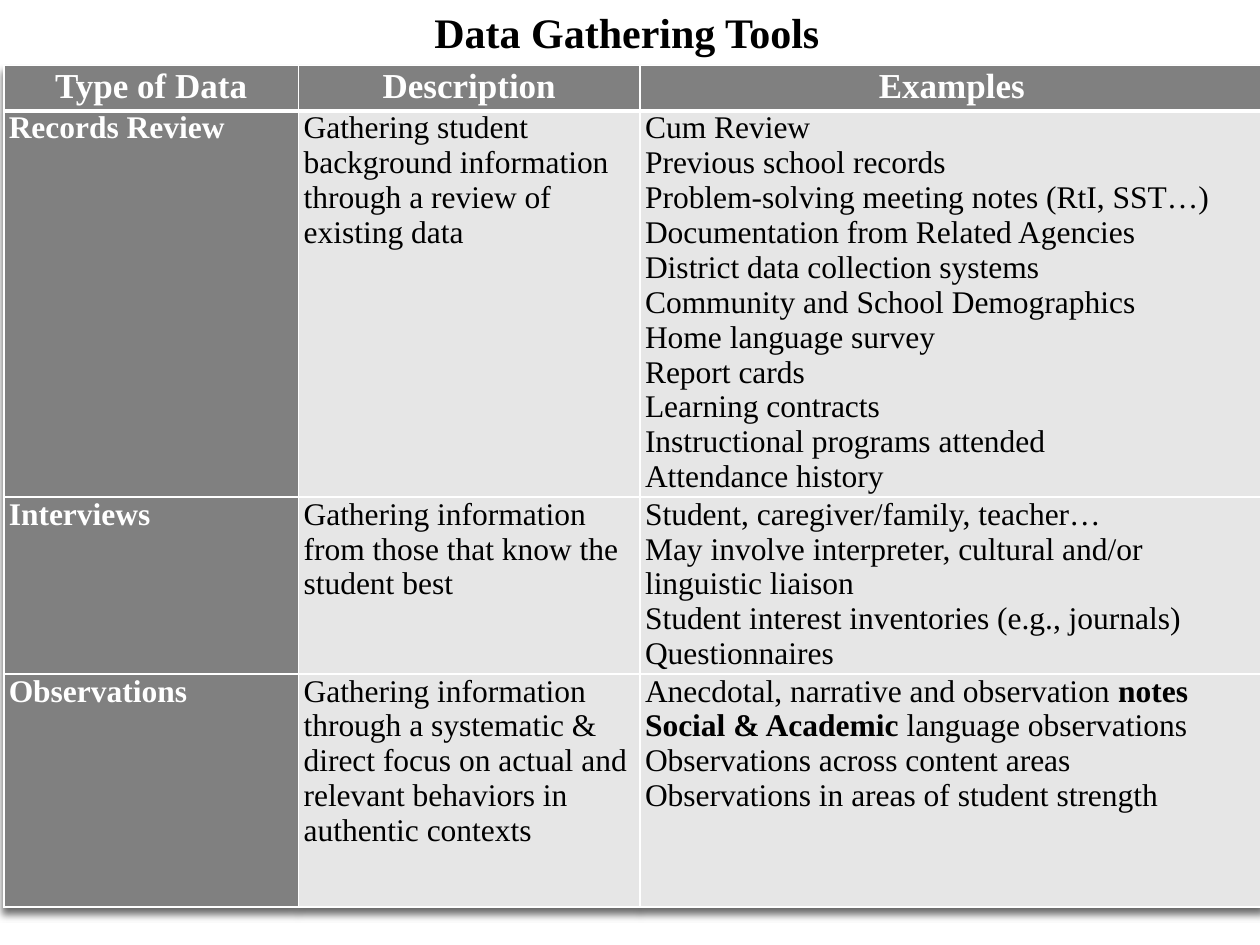
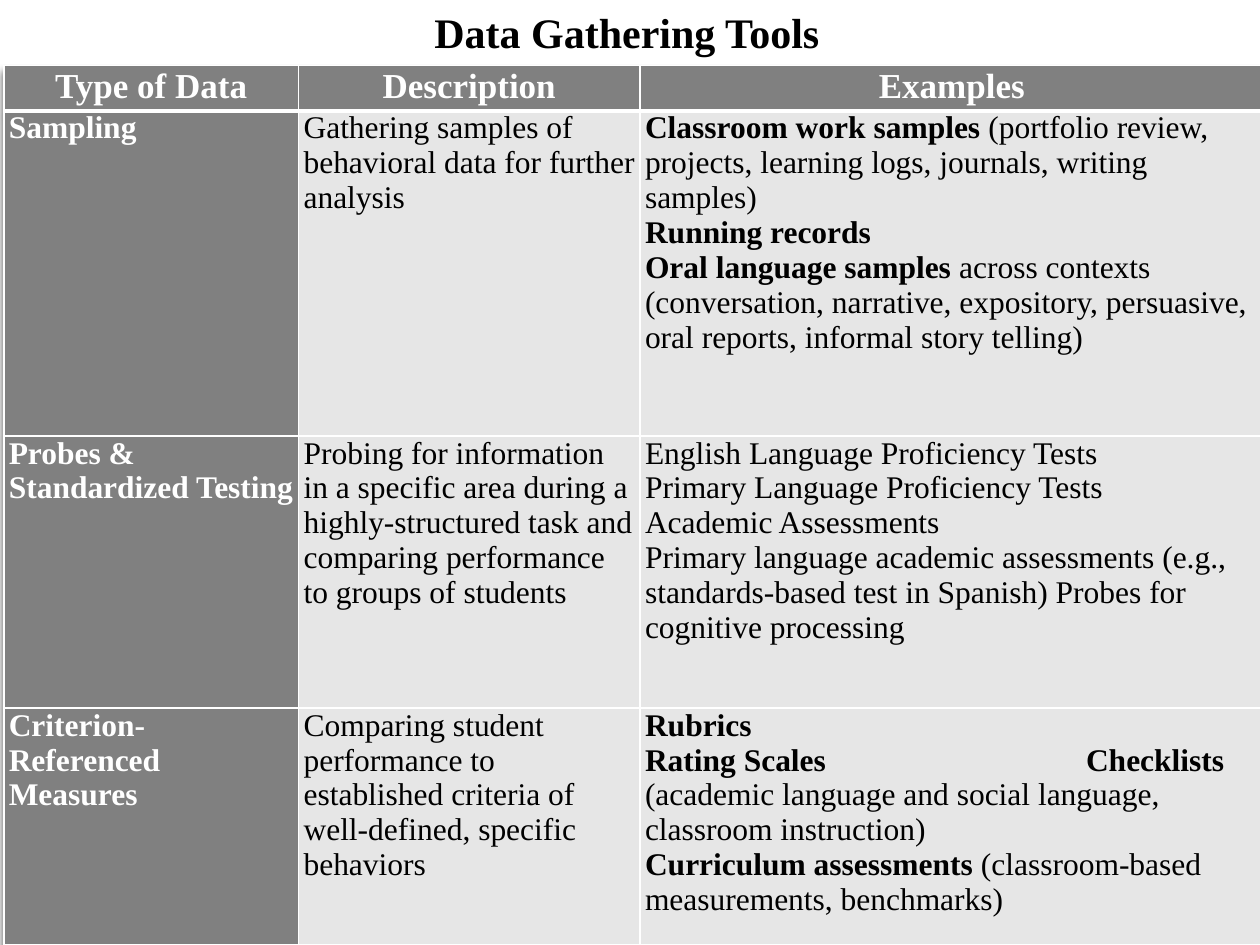
from lxml import etree
from pptx import Presentation
from pptx.dml.color import RGBColor
from pptx.enum.text import MSO_ANCHOR, PP_ALIGN
from pptx.oxml.ns import qn
from pptx.util import Inches, Pt

CENTER, LEFT = PP_ALIGN.CENTER, PP_ALIGN.LEFT
MIDDLE, TOP = MSO_ANCHOR.MIDDLE, MSO_ANCHOR.TOP

WIDE, HIGH = 10, 7.5
FACE = "Times New Roman"
WHITE, BLACK, GRAY, PALE = "FFFFFF", "000000", "808080", "E6E6E6"
TITLE = "Data Gathering Tools"
TITLE_BOX = (3.33, 0, 3.29, 0.5)
GRID_AT = (0.03, 0.52)
COLS = (2.34, 2.71, 4.95)
HEAD_ROW = 0.36
TAB_AT = 3.5
HEADS = ("Type of Data", "Description", "Examples")

# Each row: height, type, description, examples. Asterisks enclose bold words.
FIRST = [
    (3.03, "Records Review",
     "Gathering student background information through a review of existing data",
     ["Cum Review",
      "Previous school records",
      "Problem-solving meeting notes (RtI, SST…)",
      "Documentation from Related Agencies",
      "District data collection systems",
      "Community and School Demographics",
      "Home language survey",
      "Report cards",
      "Learning contracts",
      "Instructional programs attended",
      "Attendance history"]),
    (1.39, "Interviews",
     "Gathering information from those that know the student best",
     ["Student, caregiver/family, teacher…",
      "May involve interpreter, cultural and/or linguistic liaison",
      "Student interest inventories (e.g., journals)",
      "Questionnaires"]),
    (1.85, "Observations",
     "Gathering information through a systematic & direct focus on actual and "
     "relevant behaviors in authentic contexts",
     ["Anecdotal, narrative and observation *notes*",
      "*Social & Academic* language observations",
      "Observations across content areas",
      "Observations in areas of student strength"]),
]
SECOND = [
    (2.58, "Sampling",
     "Gathering samples of behavioral data for further analysis",
     ["*Classroom work samples* (portfolio review, projects, learning logs, "
      "journals, writing samples)",
      "*Running records*",
      "*Oral language samples* across contexts (conversation, narrative, "
      "expository, persuasive, oral reports, informal story telling)"]),
    (2.16, "Probes & Standardized Testing",
     "Probing for information in a specific area during a highly-structured "
     "task and comparing performance to groups of students",
     ["English Language Proficiency Tests",
      "Primary Language Proficiency Tests",
      "Academic Assessments",
      "Primary language academic assessments (e.g., standards-based test in "
      "Spanish) Probes for cognitive processing"]),
    (1.88, "Criterion-Referenced Measures",
     "Comparing student performance to established criteria of well-defined, "
     "specific behaviors",
     ["*Rubrics*",
      "*Rating Scales\tChecklists* (academic language and social language, "
      "classroom instruction)",
      "*Curriculum assessments* (classroom-based measurements, benchmarks)"]),
]


def color(code):
    return RGBColor.from_string(code)


def node(parent, tag, **attrs):
    item = etree.SubElement(parent, qn(tag))
    for name, value in attrs.items():
        item.set(name, str(value))
    return item


def write(frame, lines, size, ink, bold, align):
    """Put one paragraph per line, with bold for words between asterisks."""
    for i, line in enumerate(lines):
        para = frame.paragraphs[0] if i == 0 else frame.add_paragraph()
        para.alignment = align
        if "\t" in line:
            tabs = node(para._p.get_or_add_pPr(), "a:tabLst")
            node(tabs, "a:tab", pos=Inches(TAB_AT), algn="l")
        font = para.font
        font.name, font.size, font.bold = FACE, Pt(size), bold
        font.color.rgb = color(ink)
        for j, part in enumerate(line.split("*")):
            if part:
                run = para.add_run()
                run.text = part
                if j % 2:
                    run.font.bold = True


def edge(cell, foot):
    """Draw white borders; foot is the weight of the lower one."""
    props = cell._tc.get_or_add_tcPr()
    for i, (side, weight) in enumerate(
            (("L", 1), ("R", 1), ("T", 1), ("B", foot))):
        line = node(props, "a:ln" + side, w=Pt(weight))
        node(node(line, "a:solidFill"), "a:srgbClr", val=WHITE)
        props.insert(i, line)


def fill_cell(cell, lines, head, label):
    dark = head or label
    cell.margin_left = cell.margin_right = Inches(0.04)
    cell.margin_top, cell.margin_bottom = 0, Inches(0.02)
    cell.vertical_anchor = MIDDLE if head else TOP
    cell.fill.solid()
    cell.fill.fore_color.rgb = color(GRAY if dark else PALE)
    edge(cell, 3 if head else 1)
    write(cell.text_frame, lines, 20 if head else 18,
          WHITE if dark else BLACK, dark, CENTER if head else LEFT)


def shade(table):
    """Cast a soft shadow below the table."""
    props = table._tbl.tblPr
    effects = node(props, "a:effectLst")
    props.insert(0, effects)
    cast = node(effects, "a:outerShdw", blurRad=Pt(4), dist=Pt(4),
                dir=5400000, rotWithShape=0)
    node(node(cast, "a:srgbClr", val=BLACK), "a:alpha", val=60000)


def add_title(slide, box):
    frame = slide.shapes.add_textbox(*map(Inches, box)).text_frame
    frame.word_wrap = False
    write(frame, [TITLE], 24, BLACK, True, CENTER)


def add_grid(slide, at, rows):
    highs = [HEAD_ROW] + [row[0] for row in rows]
    size = (sum(COLS), sum(highs))
    table = slide.shapes.add_table(
        len(highs), len(COLS), *map(Inches, at + size)).table
    table.first_col, table.horz_banding = True, False
    for col, wide in zip(table.columns, COLS):
        col.width = Inches(wide)
    for row, high in zip(table.rows, highs):
        row.height = Inches(high)
    shade(table)
    texts = [[[head] for head in HEADS]]
    texts += [[[kind], [about], cases] for _, kind, about, cases in rows]
    for r, row in enumerate(texts):
        for c, lines in enumerate(row):
            fill_cell(table.cell(r, c), lines, r == 0, c == 0)


def main():
    deck = Presentation()
    deck.slide_width, deck.slide_height = Inches(WIDE), Inches(HIGH)
    for rows in (FIRST, SECOND):
        slide = deck.slides.add_slide(deck.slide_layouts[6])
        add_grid(slide, GRID_AT, rows)
        add_title(slide, TITLE_BOX)
    deck.save("out.pptx")


if __name__ == "__main__":
    main()
